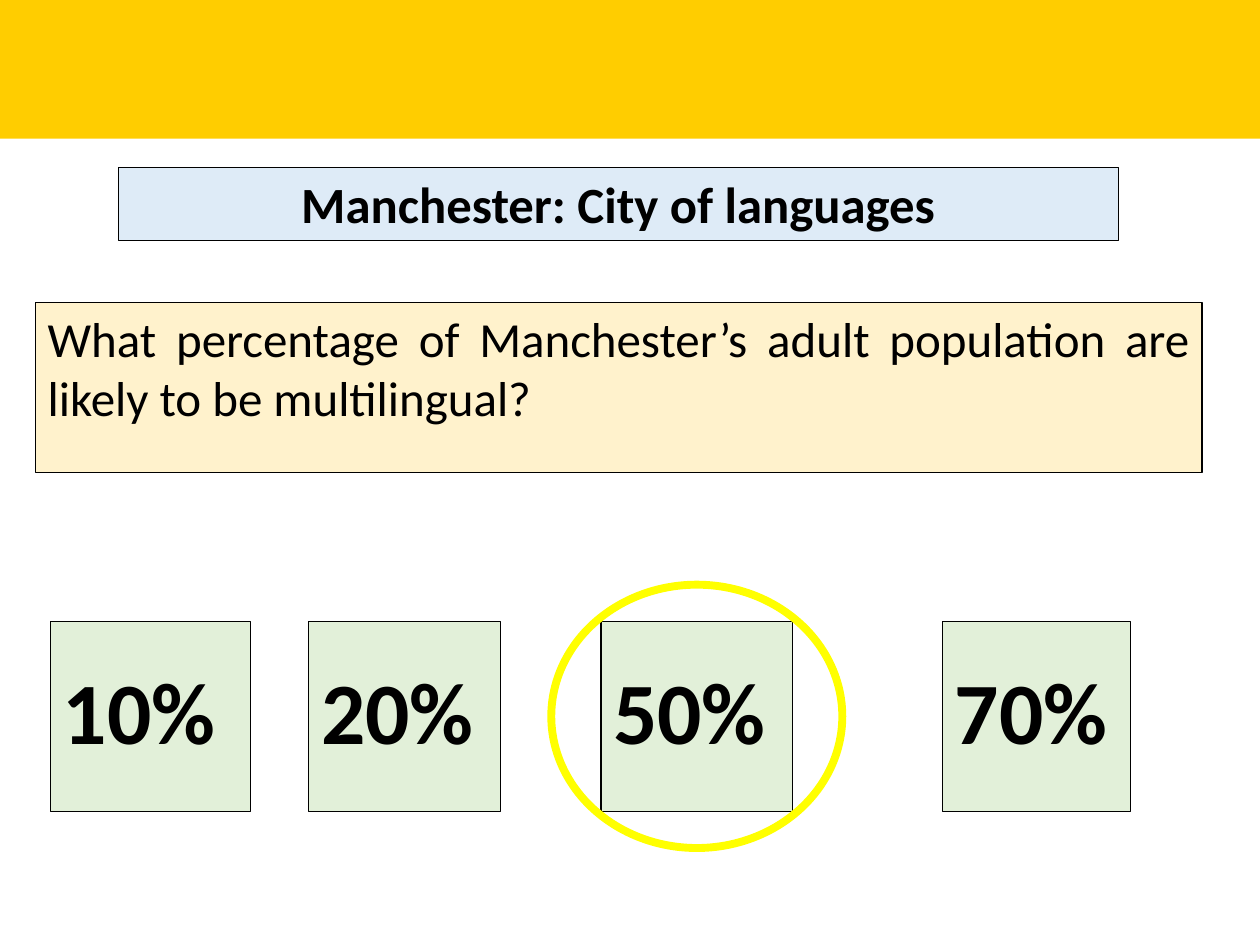
import pptx
import pptx.util
import pptx.dml.color
import pptx.enum.shapes
import pptx.enum.text

SHAPE = pptx.enum.shapes.MSO_SHAPE
ALIGN = pptx.enum.text.PP_ALIGN
ANCHOR = pptx.enum.text.MSO_ANCHOR

COLOURS = {
    "band": "FFCD00",
    "title": "DEEBF7",
    "question": "FFF2CC",
    "answer": "E2F0D9",
    "ring": "FFFF00",
    "ink": "000000",
}
FONT = "Calibri"

# The slide is a grid of 100 columns by 75 rows; boxes are (left, top, width, height)
COLUMNS, ROWS = 100, 75
deck = pptx.Presentation()
deck.slide_width = pptx.util.Inches(10)
deck.slide_height = pptx.util.Inches(7.5)
COLUMN = deck.slide_width / COLUMNS
ROW = deck.slide_height / ROWS


def colour(name):
    return pptx.dml.color.RGBColor.from_string(COLOURS[name])


def add_panel(slide, box, fill=None, line=None, weight=0.75, kind=SHAPE.RECTANGLE):
    left, top, width, height = box
    panel = slide.shapes.add_shape(
        kind, round(left * COLUMN), round(top * ROW),
        round(width * COLUMN), round(height * ROW))
    panel.shadow.inherit = False
    if fill:
        panel.fill.solid()
        panel.fill.fore_color.rgb = colour(fill)
    else:
        panel.fill.background()
    if line:
        panel.line.color.rgb = colour(line)
        panel.line.width = pptx.util.Pt(weight)
    else:
        panel.line.fill.background()
    return panel


def write(panel, text, size, bold=False, align=ALIGN.JUSTIFY,
          anchor=ANCHOR.MIDDLE, spacing=0.9):
    frame = panel.text_frame
    frame.word_wrap = True
    frame.vertical_anchor = anchor
    paragraph = frame.paragraphs[0]
    paragraph.alignment = align
    paragraph.line_spacing = spacing
    run = paragraph.add_run()
    run.text = text
    run.font.name = FONT
    run.font.size = pptx.util.Pt(size)
    run.font.bold = bold
    run.font.color.rgb = colour("ink")


def add_band(slide, box):
    add_panel(slide, box, fill="band")


def add_title(slide, box):
    write(add_panel(slide, box, fill="title", line="ink"),
          "Manchester: City of languages", size=29, bold=True,
          align=ALIGN.CENTER, anchor=ANCHOR.BOTTOM)


def add_question(slide, box):
    write(add_panel(slide, box, fill="question", line="ink"),
          "What percentage of Manchester’s adult population are "
          "likely to be multilingual?",
          size=28, anchor=ANCHOR.TOP, spacing=1.0)


def add_answers(slide, box, answers, correct):
    left, top, _, height = box
    for answer, offset, width in answers:
        card = (left + offset, top, width, height)
        write(add_panel(slide, card, fill="answer", line="ink"),
              answer, size=50, bold=True)
        if answer == correct:
            correct_card = card
    add_ring(slide, correct_card)


def add_ring(slide, card, margin_x=3.95, margin_y=2.9):
    left, top, width, height = card
    ring = (left - margin_x, top - margin_y,
            width + 2 * margin_x, height + 2 * margin_y)
    add_panel(slide, ring, line="ring", weight=4.5, kind=SHAPE.OVAL)


def main():
    slide = deck.slides.add_slide(deck.slide_layouts[6])

    # Heading
    add_band(slide, (0, 0, COLUMNS, 11))
    add_title(slide, (9.4, 13.3, 79.4, 5.8))

    # Question
    add_question(slide, (2.8, 24, 92.6, 13.5))

    # Answers: text, offset from the row's left edge, width
    answers = [("10%", 0, 15.9), ("20%", 20.5, 15.2),
               ("50%", 43.7, 15.2), ("70%", 70.8, 14.9)]
    add_answers(slide, (4, 49.3, 85.7, 15.1), answers, correct="50%")

    deck.save("out.pptx")


if __name__ == "__main__":
    main()
